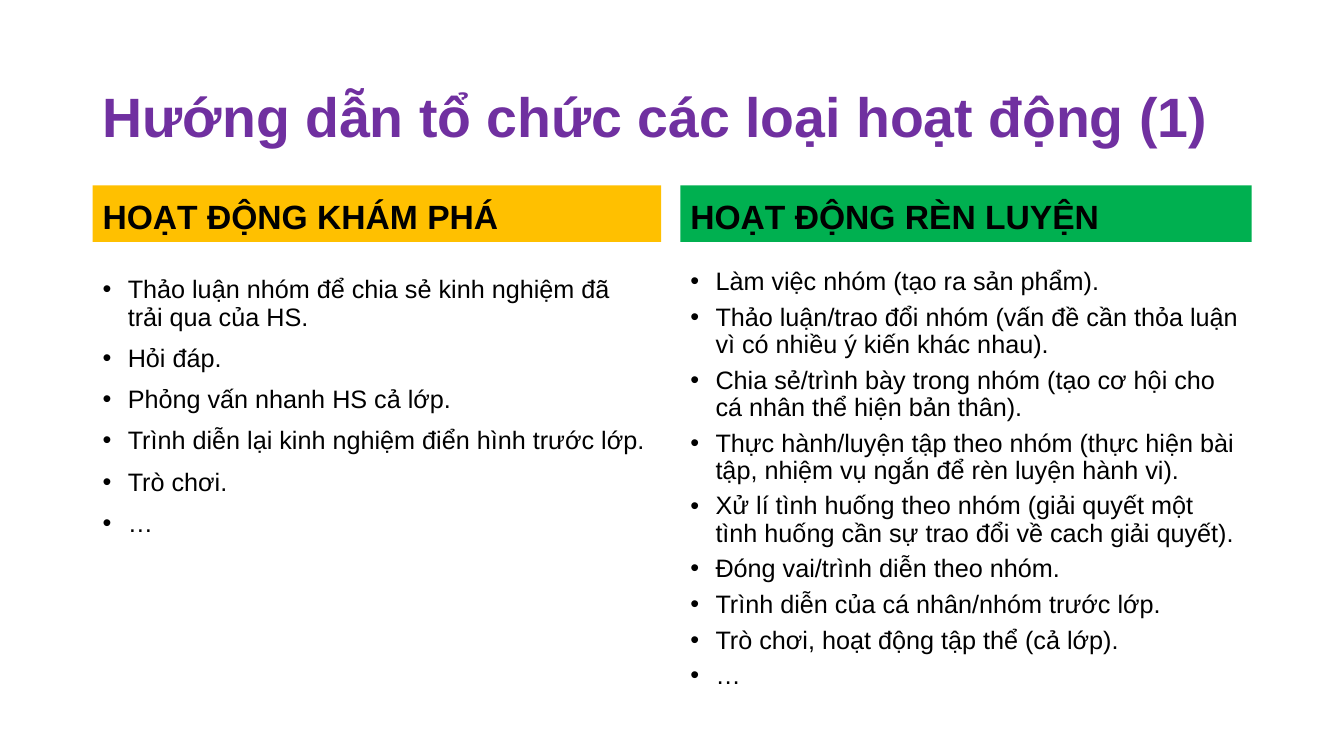
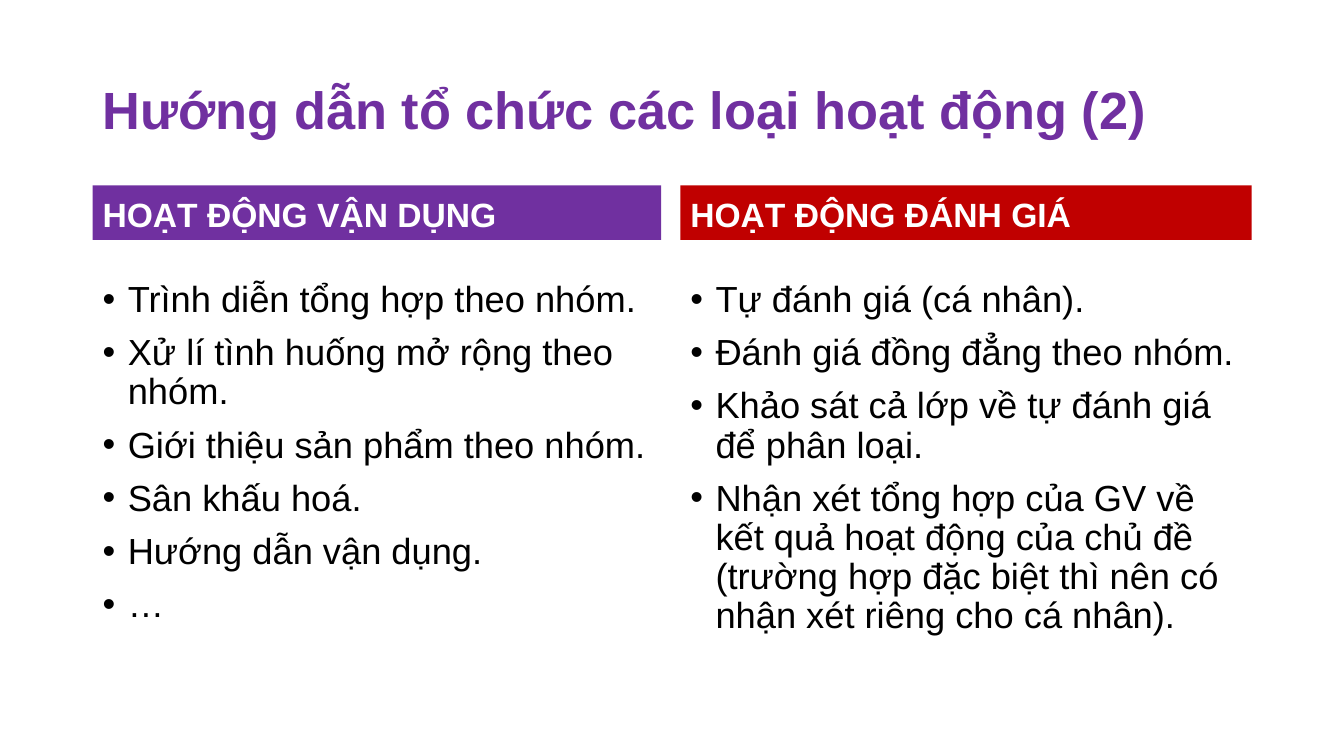
from lxml.etree import SubElement
from pptx import Presentation
from pptx.dml.color import RGBColor
from pptx.enum.shapes import MSO_SHAPE
from pptx.enum.text import MSO_ANCHOR, MSO_AUTO_SIZE, PP_ALIGN
from pptx.oxml.ns import qn
from pptx.util import Pt

# Shared look
FONT = "Arial"
BLACK, WHITE, PURPLE = "000000", "FFFFFF", "7030A0"
LEFT, FULL = 66.2, 828
COLS = [(LEFT, 406), (486, 408)]
BAND_TOP, LIST_H = 132.5, 290
INDENT = 18

# Each column: heading, fill, list top, space before, items
SLIDES = [
    dict(
        title="Hướng dẫn tổ chức các loại hoạt động (1)",
        top=60.5, size=39.6, line=0.9, band=40.3, ink=BLACK, body=18,
        cols=[
            ("HOẠT ĐỘNG KHÁM PHÁ", "FFC000", 194.4, 10, [
                "Thảo luận nhóm để chia sẻ kinh nghiệm đã trải qua của HS.",
                "Hỏi đáp.",
                "Phỏng vấn nhanh HS cả lớp.",
                "Trình diễn lại kinh nghiệm điển hình trước lớp.",
                "Trò chơi.",
                "…",
            ]),
            ("HOẠT ĐỘNG RÈN LUYỆN", "00B050", 188.6, 6, [
                "Làm việc nhóm (tạo ra sản phẩm).",
                "Thảo luận/trao đổi nhóm (vấn đề cần thỏa luận vì có nhiều "
                "ý kiến khác nhau).",
                "Chia sẻ/trình bày trong nhóm (tạo cơ hội cho cá nhân thể "
                "hiện bản thân).",
                "Thực hành/luyện tập theo nhóm (thực hiện bài tập, nhiệm vụ "
                "ngắn để rèn luyện hành vi).",
                "Xử lí tình huống theo nhóm (giải quyết một tình huống cần "
                "sự trao đổi về cach giải quyết).",
                "Đóng vai/trình diễn theo nhóm.",
                "Trình diễn của cá nhân/nhóm trước lớp.",
                "Trò chơi, hoạt động tập thể (cả lớp).",
                "…",
            ]),
        ],
    ),
    dict(
        title="Hướng dẫn tổ chức các loại hoạt động (2)",
        top=56.2, size=37.4, line=0.8, band=38.9, ink=WHITE, body=25.9,
        cols=[
            ("HOẠT ĐỘNG VẬN DỤNG", PURPLE, 197.3, 10, [
                "Trình diễn tổng hợp theo nhóm.",
                "Xử lí tình huống mở rộng theo nhóm.",
                "Giới thiệu sản phẩm theo nhóm.",
                "Sân khấu hoá.",
                "Hướng dẫn vận dụng.",
                "…",
            ]),
            ("HOẠT ĐỘNG ĐÁNH GIÁ", "C00000", 197.3, 10, [
                "Tự đánh giá (cá nhân).",
                "Đánh giá đồng đẳng theo nhóm.",
                "Khảo sát cả lớp về tự đánh giá để phân loại.",
                "Nhận xét tổng hợp của GV về kết quả hoạt động của chủ đề "
                "(trường hợp đặc biệt thì nên có nhận xét riêng cho cá nhân).",
            ]),
        ],
    ),
]


def rgb(code):
    return RGBColor.from_string(code)


def set_frame(frame, anchor):
    frame.word_wrap = True
    frame.auto_size = MSO_AUTO_SIZE.NONE
    frame.vertical_anchor = anchor
    frame.margin_left = frame.margin_right = Pt(7.2)
    frame.margin_top = frame.margin_bottom = Pt(3.6)


def style(para, size, color, bold=False, line=0.9):
    para.alignment = PP_ALIGN.LEFT
    para.line_spacing = line
    for run in para.runs:
        font = run.font
        font.name, font.size, font.bold = FONT, Pt(size), bold
        font.color.rgb = rgb(color)


def add_title(slide, text, top, size, line):
    title = slide.shapes.title
    title.left, title.top = Pt(LEFT), Pt(top)
    title.width, title.height = Pt(FULL), Pt(50.4)
    frame = title.text_frame
    set_frame(frame, MSO_ANCHOR.MIDDLE)
    frame.text = text
    style(frame.paragraphs[0], size, PURPLE, True, line)


def add_band(slide, text, left, width, height, fill, ink):
    band = slide.shapes.add_shape(
        MSO_SHAPE.RECTANGLE, Pt(left), Pt(BAND_TOP), Pt(width), Pt(height))
    band.shadow.inherit = False
    band.fill.solid()
    band.fill.fore_color.rgb = rgb(fill)
    band.line.fill.background()
    frame = band.text_frame
    set_frame(frame, MSO_ANCHOR.BOTTOM)
    frame.text = text
    style(frame.paragraphs[0], 24, ink, True)


def add_bullet(para):
    props = para._p.get_or_add_pPr()
    props.set("marL", str(Pt(INDENT)))
    props.set("indent", str(-Pt(INDENT)))
    color = SubElement(props, qn("a:buClr"))
    SubElement(color, qn("a:srgbClr"), val=BLACK)
    SubElement(props, qn("a:buFont"), typeface=FONT)
    SubElement(props, qn("a:buChar"), char="•")


def add_list(slide, items, left, top, width, size, gap):
    box = slide.shapes.add_textbox(Pt(left), Pt(top), Pt(width), Pt(LIST_H))
    frame = box.text_frame
    set_frame(frame, MSO_ANCHOR.TOP)
    frame.text = "\n".join(items)
    for i, para in enumerate(frame.paragraphs):
        add_bullet(para)
        style(para, size, BLACK)
        if i:
            para.space_before = Pt(gap)


def main():
    deck = Presentation()
    deck.slide_width, deck.slide_height = Pt(960), Pt(540)
    for page in SLIDES:
        slide = deck.slides.add_slide(deck.slide_layouts[5])
        add_title(slide, page["title"], page["top"], page["size"],
                  page["line"])
        for (left, width), col in zip(COLS, page["cols"]):
            head, fill, top, gap, items = col
            add_band(slide, head, left, width, page["band"], fill,
                     page["ink"])
            add_list(slide, items, left, top, width, page["body"], gap)
    deck.save("out.pptx")


if __name__ == "__main__":
    main()
